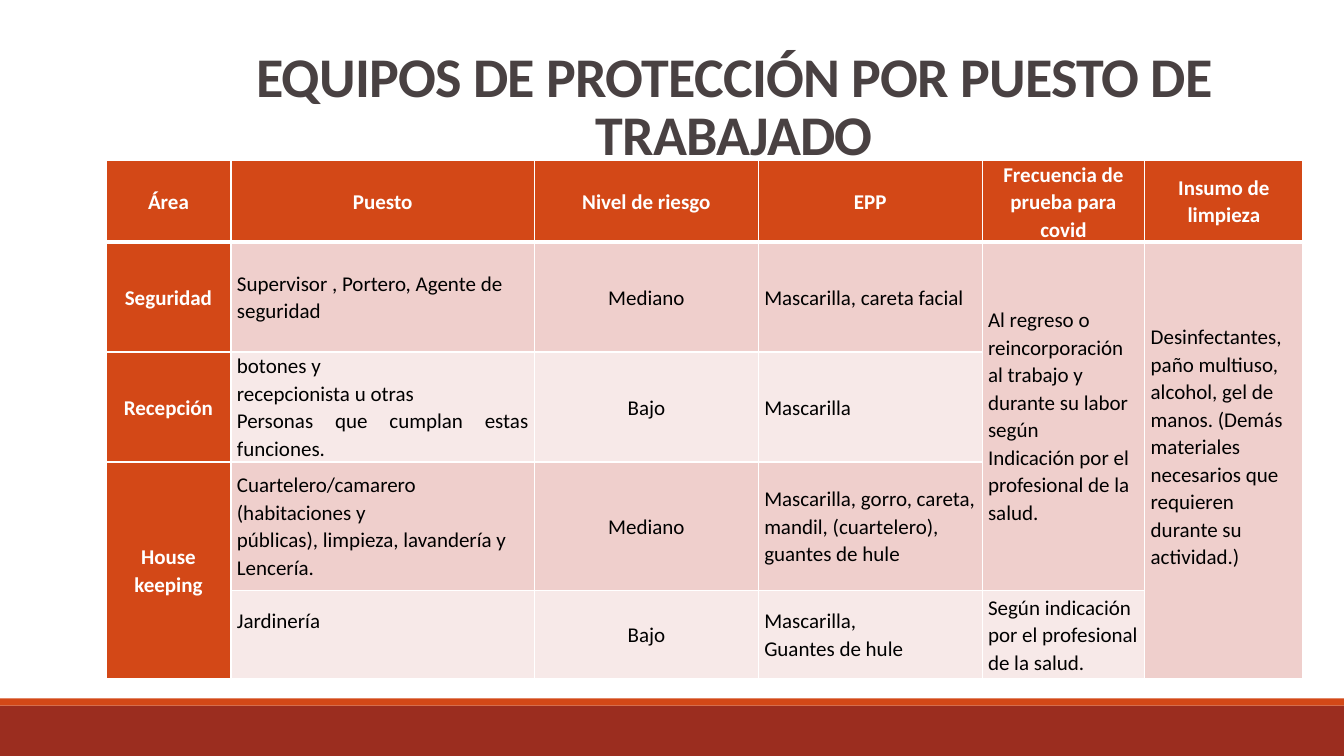
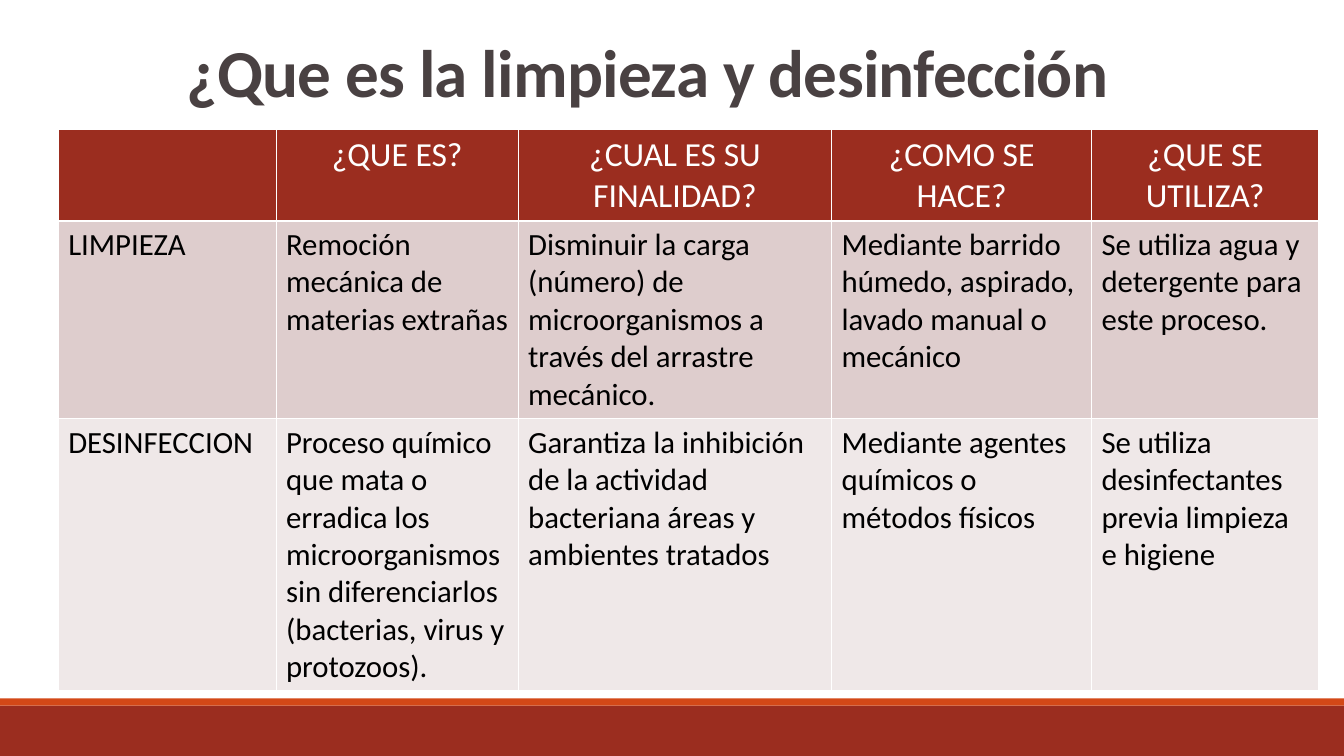
import dataclasses
import typing

import lxml.etree
import pptx
import pptx.dml.color
import pptx.enum.shapes
import pptx.enum.text
import pptx.oxml.ns
import pptx.presentation
import pptx.slide
import pptx.table
import pptx.text.text
import pptx.util

Cm = pptx.util.Cm
Pt = pptx.util.Pt
RGBColor = pptx.dml.color.RGBColor
Align = pptx.enum.text.PP_ALIGN
Anchor = pptx.enum.text.MSO_ANCHOR

WHITE = RGBColor(0xFF, 0xFF, 0xFF)
BLACK = RGBColor(0, 0, 0)
TITLE_GREY = RGBColor(0x49, 0x41, 0x42)
ORANGE = RGBColor(0xD3, 0x48, 0x17)
BRICK = RGBColor(0x9B, 0x2D, 0x1F)
ROSE = RGBColor(0xEF, 0xCF, 0xCC)
PALE_ROSE = RGBColor(0xF7, 0xE9, 0xE8)
MAUVE = RGBColor(0xDE, 0xCD, 0xCD)
PALE_MAUVE = RGBColor(0xEF, 0xE8, 0xE8)

FONT = "Calibri"
PAGE_WIDTH, PAGE_HEIGHT = Cm(33.87), Cm(19.05)


@dataclasses.dataclass(frozen=True)
class Band:
    top: float
    height: float
    color: RGBColor


@dataclasses.dataclass(frozen=True)
class Title:
    text: str
    area: tuple[float, float, float, float]
    size: float


@dataclasses.dataclass(frozen=True)
class Cell:
    """Text with one paragraph a line, and what departs from the grid's rule."""
    text: str
    align: typing.Optional[Align] = None
    rows: int = 1
    space_below: float = 0


@dataclasses.dataclass(frozen=True)
class Grid:
    left: float
    top: float
    widths: tuple[float, ...]
    heights: tuple[float, ...]
    rows: tuple[tuple[typing.Union[str, Cell, None], ...], ...]
    aligns: tuple[Align, ...]
    head_fill: RGBColor
    band_fills: tuple[RGBColor, RGBColor]
    head_size: float
    body_size: float
    head_bold: bool
    head_column: bool
    head_rule: float
    anchor: Anchor
    side_margin: float
    end_margin: float
    line_spacing: float


BANDS = (Band(17.78, 1.27, BRICK), Band(17.6, 0.18, ORANGE))

EQUIPMENT_TITLE = Title(
    "EQUIPOS DE PROTECCIÓN POR PUESTO DE TRABAJADO", (3.81, 0.28, 29.39, 4.04), 40)

EQUIPMENT_GRID = Grid(
    left=2.67, top=4.04,
    widths=(3.15, 7.65, 5.64, 5.64, 4.1, 3.99),
    heights=(2.06, 2.77, 2.77, 3.23, 2.24),
    rows=(
        ("Área", "Puesto", "Nivel de riesgo", "EPP",
         "Frecuencia de prueba para covid", "Insumo de limpieza"),
        ("Seguridad", "Supervisor , Portero, Agente de seguridad", "Mediano",
         "Mascarilla, careta facial",
         Cell("Al regreso o\nreincorporación al trabajo y durante su labor según\n"
              "Indicación por el profesional de la salud.", rows=3),
         Cell("Desinfectantes,\npaño multiuso,\nalcohol, gel de\nmanos. (Demás materiales "
              "necesarios que requieren durante su actividad.)", rows=4, space_below=0.69)),
        ("Recepción",
         Cell("botones y\nrecepcionista u otras\nPersonas que cumplan estas funciones.",
              align=Align.JUSTIFY),
         "Bajo", "Mascarilla", None, None),
        (Cell("House keeping", rows=2),
         "Cuartelero/camarero\n(habitaciones y\npúblicas), limpieza, lavandería y\nLencería.",
         "Mediano", "Mascarilla, gorro, careta, mandil, (cuartelero), guantes de hule",
         None, None),
        (None, Cell("Jardinería", space_below=0.69), "Bajo", "Mascarilla,\nGuantes de hule",
         "Según indicación por el profesional\nde la salud.", None),
    ),
    aligns=(Align.CENTER, Align.LEFT, Align.CENTER, Align.LEFT, Align.LEFT, Align.LEFT),
    head_fill=ORANGE, band_fills=(ROSE, PALE_ROSE),
    head_size=15, body_size=15, head_bold=True, head_column=True, head_rule=3,
    anchor=Anchor.MIDDLE, side_margin=0.15, end_margin=0, line_spacing=1.07)

CLEANING_TITLE = Title("¿Que es la limpieza y desinfección", (1.45, 0.64, 29.74, 2.29), 48)

CLEANING_GRID = Grid(
    left=1.47, top=3.25,
    widths=(5.49, 6.1, 7.9, 6.55, 5.72),
    heights=(2.32, 4.98, 6.85),
    rows=(
        ("", "¿QUE ES?", "¿CUAL ES SU FINALIDAD?", "¿COMO SE HACE?", "¿QUE SE UTILIZA?"),
        ("LIMPIEZA", "Remoción mecánica de materias extrañas",
         "Disminuir la carga (número) de microorganismos a través del arrastre mecánico.",
         "Mediante barrido húmedo, aspirado, lavado manual o mecánico",
         "Se utiliza agua y detergente para este proceso."),
        ("DESINFECCION",
         "Proceso químico que mata o erradica los microorganismos sin diferenciarlos "
         "(bacterias, virus y protozoos).",
         "Garantiza la inhibición de la actividad bacteriana áreas y ambientes tratados",
         "Mediante agentes químicos o métodos físicos",
         "Se utiliza desinfectantes previa limpieza e higiene"),
    ),
    aligns=(Align.LEFT,) * 5,
    head_fill=BRICK, band_fills=(MAUVE, PALE_MAUVE),
    head_size=24, body_size=22, head_bold=False, head_column=False, head_rule=1,
    anchor=Anchor.TOP, side_margin=0.25, end_margin=0.13, line_spacing=1.0)


def set_all(target: typing.Any, values: dict[str, typing.Any]) -> None:
    for name, value in values.items():
        setattr(target, name, value)


def write_para(para: pptx.text.text._Paragraph, text: str, align: Align, spacing: float,
               font: dict[str, typing.Any]) -> pptx.text.text._Run:
    set_all(para, {"alignment": align, "line_spacing": spacing})
    span = para.add_run()
    span.text = text
    set_all(span.font, {"name": FONT, **font})
    span.font.color.rgb = font["color_rgb"] if "color_rgb" in font else BLACK
    return span


def draw_band(page: pptx.slide.Slide, band: Band) -> None:
    shape = page.shapes.add_shape(
        pptx.enum.shapes.MSO_SHAPE.RECTANGLE, 0, Cm(band.top), PAGE_WIDTH, Cm(band.height))
    shape.shadow.inherit = False
    shape.fill.solid()
    shape.fill.fore_color.rgb = band.color
    shape.line.fill.background()


def draw_title(page: pptx.slide.Slide, title: Title) -> None:
    box = page.shapes.add_textbox(*map(Cm, title.area))
    set_all(box.text_frame, {"word_wrap": True, "vertical_anchor": Anchor.BOTTOM})
    span = write_para(box.text_frame.paragraphs[0], title.text, Align.CENTER, 0.85,
                      {"size": Pt(title.size), "bold": True})
    span.font.color.rgb = TITLE_GREY
    span.font._element.set("spc", "-50")


def set_borders(cell: pptx.table._Cell, widths: dict[str, float]) -> None:
    """Add white borders; they must precede the fill in the cell's XML."""
    properties = cell._tc.get_or_add_tcPr()
    for side, width in widths.items():
        line = lxml.etree.SubElement(
            properties, pptx.oxml.ns.qn(f"a:ln{side}"), w=str(int(Pt(width))))
        fill = lxml.etree.SubElement(line, pptx.oxml.ns.qn("a:solidFill"))
        lxml.etree.SubElement(fill, pptx.oxml.ns.qn("a:srgbClr"), val=str(WHITE))


def fill_cell(cell: pptx.table._Cell, content: Cell, grid: Grid, row: int, column: int) -> None:
    is_head = row == 0 or (grid.head_column and column == 0)
    cell.fill.solid()
    cell.fill.fore_color.rgb = grid.head_fill if is_head else grid.band_fills[(row - 1) % 2]
    set_all(cell, {
        "vertical_anchor": grid.anchor,
        "margin_left": Cm(grid.side_margin), "margin_right": Cm(grid.side_margin),
        "margin_top": Cm(grid.end_margin),
        "margin_bottom": Cm(grid.end_margin + content.space_below),
    })
    align = Align.CENTER if row == 0 else content.align or grid.aligns[column]
    size = Pt(grid.head_size if row == 0 else grid.body_size)
    for index, text in enumerate(content.text.split("\n")):
        frame = cell.text_frame
        para = frame.add_paragraph() if index else frame.paragraphs[0]
        if text:
            span = write_para(para, text, align, grid.line_spacing,
                              {"size": size, "bold": is_head and grid.head_bold})
            span.font.color.rgb = WHITE if is_head else BLACK


def draw_grid(page: pptx.slide.Slide, grid: Grid) -> None:
    table = page.shapes.add_table(
        len(grid.heights), len(grid.widths), Cm(grid.left), Cm(grid.top),
        Cm(sum(grid.widths)), Cm(sum(grid.heights))).table
    set_all(table, {"first_row": True, "horz_banding": False})
    for column, width in zip(table.columns, grid.widths):
        column.width = Cm(width)
    for row, height in zip(table.rows, grid.heights):
        row.height = Cm(height)

    for row, contents in enumerate(grid.rows):
        for column, content in enumerate(contents):
            cell = table.cell(row, column)
            set_borders(cell, {"L": 1, "R": 1,
                               "T": grid.head_rule if row == 1 else 1,
                               "B": grid.head_rule if row == 0 else 1})
            if content is None:
                continue
            if isinstance(content, str):
                content = Cell(content)
            if content.rows > 1:
                cell.merge(table.cell(row + content.rows - 1, column))
            fill_cell(cell, content, grid, row, column)


def add_page(deck: pptx.presentation.Presentation, title: Title, grid: Grid) -> None:
    page = deck.slides.add_slide(deck.slide_layouts[6])
    for band in BANDS:
        draw_band(page, band)
    draw_title(page, title)
    draw_grid(page, grid)


def main() -> None:
    deck = pptx.Presentation()
    set_all(deck, {"slide_width": PAGE_WIDTH, "slide_height": PAGE_HEIGHT})
    add_page(deck, EQUIPMENT_TITLE, EQUIPMENT_GRID)
    add_page(deck, CLEANING_TITLE, CLEANING_GRID)
    deck.save("out.pptx")


if __name__ == "__main__":
    main()
